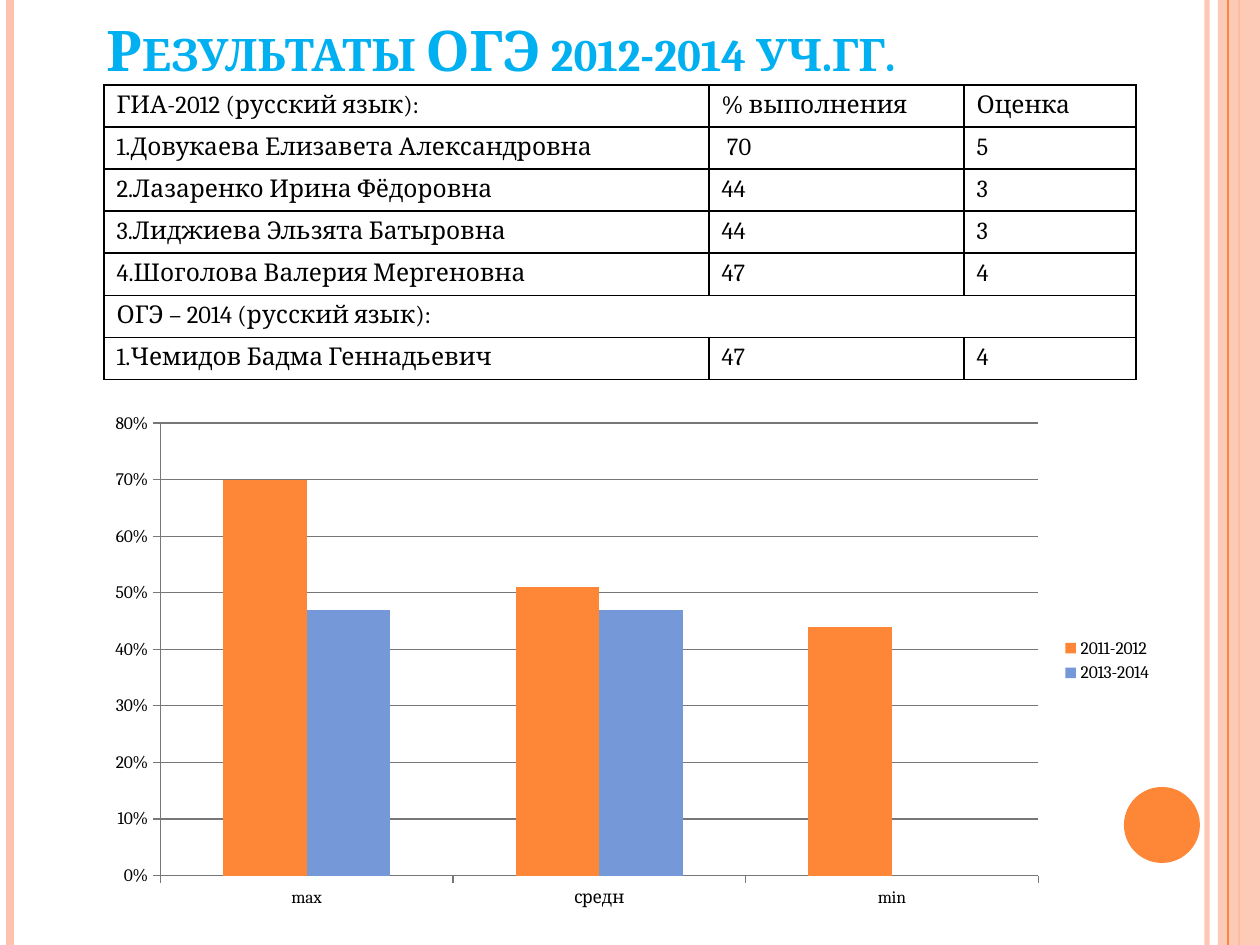
from lxml import etree
from pptx import Presentation
from pptx import util as u
from pptx.chart.data import CategoryChartData
from pptx.dml.color import RGBColor
from pptx.enum import chart as charts, shapes, text
from pptx.oxml.ns import qn

ORANGE, PEACH, BLUE = "FE8637", "FEC3AE", "7598D9"
BLACK, WHITE, SKY, GREY = "000000", "FFFFFF", "00B0F0", "777777"

RESULTS = [
    ("ГИА-2012 (русский язык):", "% выполнения", "Оценка"),
    ("1.Довукаева Елизавета Александровна", " 70", "5"),
    ("2.Лазаренко Ирина Фёдоровна", "44", "3"),
    ("3.Лиджиева Эльзята Батыровна", "44", "3"),
    ("4.Шоголова Валерия Мергеновна", "47", "4"),
    ("ОГЭ – 2014 (русский язык):",),
    ("1.Чемидов Бадма Геннадьевич", "47", "4"),
]
SCORES = [
    ("2011-2012", (0.7, 0.51, 0.44), ORANGE),
    ("2013-2014", (0.47, 0.47, None), BLUE),
]


def px(length):
    return u.Emu(round(length * 914400 / 126))


def rgb(code):
    return RGBColor.from_string(code)


class SlideBuilder:
    """Holds the font and the current slide, and adds styled elements to it."""

    def __init__(self, slide, font="Cambria"):
        self.slide, self.font = slide, font

    def style(self, font, size, color, bold=False):
        font.name, font.size, font.bold = self.font, u.Pt(size), bold
        font.color.rgb = rgb(color)

    def fade(self, fill_parent, alpha):
        color = fill_parent.find(".//" + qn("a:srgbClr"))
        etree.SubElement(color, qn("a:alpha"), val=str(alpha * 1000))

    def rule(self, x, color, width, alpha=100):
        line = self.slide.shapes.add_connector(
            shapes.MSO_CONNECTOR.STRAIGHT, px(x), 0, px(x), px(945))
        line.line.color.rgb, line.line.width = rgb(color), u.Pt(width)
        properties = line._element.spPr
        if alpha < 100:
            self.fade(properties, alpha)
        etree.SubElement(properties, qn("a:effectLst"))

    def shape(self, kind, bounds, color, alpha=100):
        shape = self.slide.shapes.add_shape(kind, *map(px, bounds))
        shape.shadow.inherit = False
        shape.fill.solid()
        shape.fill.fore_color.rgb = rgb(color)
        shape.line.fill.background()
        if alpha < 100:
            self.fade(shape._element.spPr, alpha)

    def title(self, words, bounds, size, color):
        frame = self.slide.shapes.add_textbox(*map(px, bounds)).text_frame
        frame.word_wrap = True
        frame.vertical_anchor = text.MSO_ANCHOR.BOTTOM
        para = frame.paragraphs[0]
        span = para.add_run()
        span.text = words
        self.style(span.font, size, color, bold=True)
        span.font._element.set("cap", "small")

    def border(self, cell):
        properties = cell._tc.get_or_add_tcPr()
        for place, side in enumerate(("a:lnL", "a:lnR", "a:lnT", "a:lnB")):
            line = etree.Element(qn(side), w=str(u.Pt(1)))
            fill = etree.SubElement(line, qn("a:solidFill"))
            etree.SubElement(fill, qn("a:srgbClr"), val=BLACK)
            properties.insert(place, line)

    def table(self, rows, left, top, widths, height, size):
        table = self.slide.shapes.add_table(
            len(rows), len(widths), px(left), px(top),
            px(sum(widths)), px(height * len(rows))).table
        for column, width in zip(table.columns, widths):
            column.width = px(width)
        for index, words in enumerate(rows):
            table.rows[index].height = px(height)
            for place in range(len(widths)):
                cell = table.cell(index, place)
                cell.fill.solid()
                cell.fill.fore_color.rgb = rgb(WHITE)
                self.border(cell)
                para = cell.text_frame.paragraphs[0]
                self.style(para.font, size, BLACK)
                if place < len(words):
                    para.text = words[place]
            if len(words) == 1:
                table.cell(index, 0).merge(table.cell(index, len(widths) - 1))

    def columns(self, categories, series, bounds, size):
        data = CategoryChartData(number_format="0%")
        data.categories = categories
        for name, values, _ in series:
            data.add_series(name, values)
        chart = self.slide.shapes.add_chart(
            charts.XL_CHART_TYPE.COLUMN_CLUSTERED, *map(px, bounds), data).chart
        self.style(chart.font, size, BLACK)
        chart.has_title = False
        chart.has_legend = True
        chart.legend.position = charts.XL_LEGEND_POSITION.RIGHT
        chart.legend.include_in_layout = False
        plot = chart.plots[0]
        plot.vary_by_categories, plot.gap_width, plot.overlap = False, 150, 0
        for bars, (_, _, color) in zip(plot.series, series):
            bars.format.fill.solid()
            bars.format.fill.fore_color.rgb = rgb(color)
        scale = chart.value_axis
        scale.minimum_scale, scale.maximum_scale, scale.major_unit = 0, 0.8, 0.1
        scale.tick_labels.number_format = "0%"
        scale.tick_labels.number_format_is_linked = False
        scale.has_major_gridlines = True
        for axis in (scale, chart.category_axis):
            axis.major_tick_mark = charts.XL_TICK_MARK.OUTSIDE
            axis.format.line.color.rgb = rgb(GREY)
        scale.major_gridlines.format.line.color.rgb = rgb(GREY)


def main():
    deck = Presentation()
    deck.slide_width, deck.slide_height = px(1260), px(945)
    page = SlideBuilder(deck.slides.add_slide(deck.slide_layouts[6]))
    page.rule(1207, PEACH, 3, alpha=93)
    page.rule(10, PEACH, 4.5)
    page.rule(1239, ORANGE, 1.5)
    page.shape(shapes.MSO_SHAPE.RECTANGLE, (1218, 0, 42, 945), PEACH, alpha=87)
    page.rule(1228, ORANGE, 0.75)
    page.shape(shapes.MSO_SHAPE.OVAL, (1124, 787, 76, 76), ORANGE)
    page.title("Результаты ОГЭ 2012-2014 уч.гг.", (94, 0, 1029, 89), 32, SKY)
    page.table(RESULTS, 104, 85, (605, 255, 172), 41, 14)
    page.columns(("max", "средн", "min"), SCORES, (94, 403, 1071, 515), 10)
    deck.save("out.pptx")


if __name__ == "__main__":
    main()
